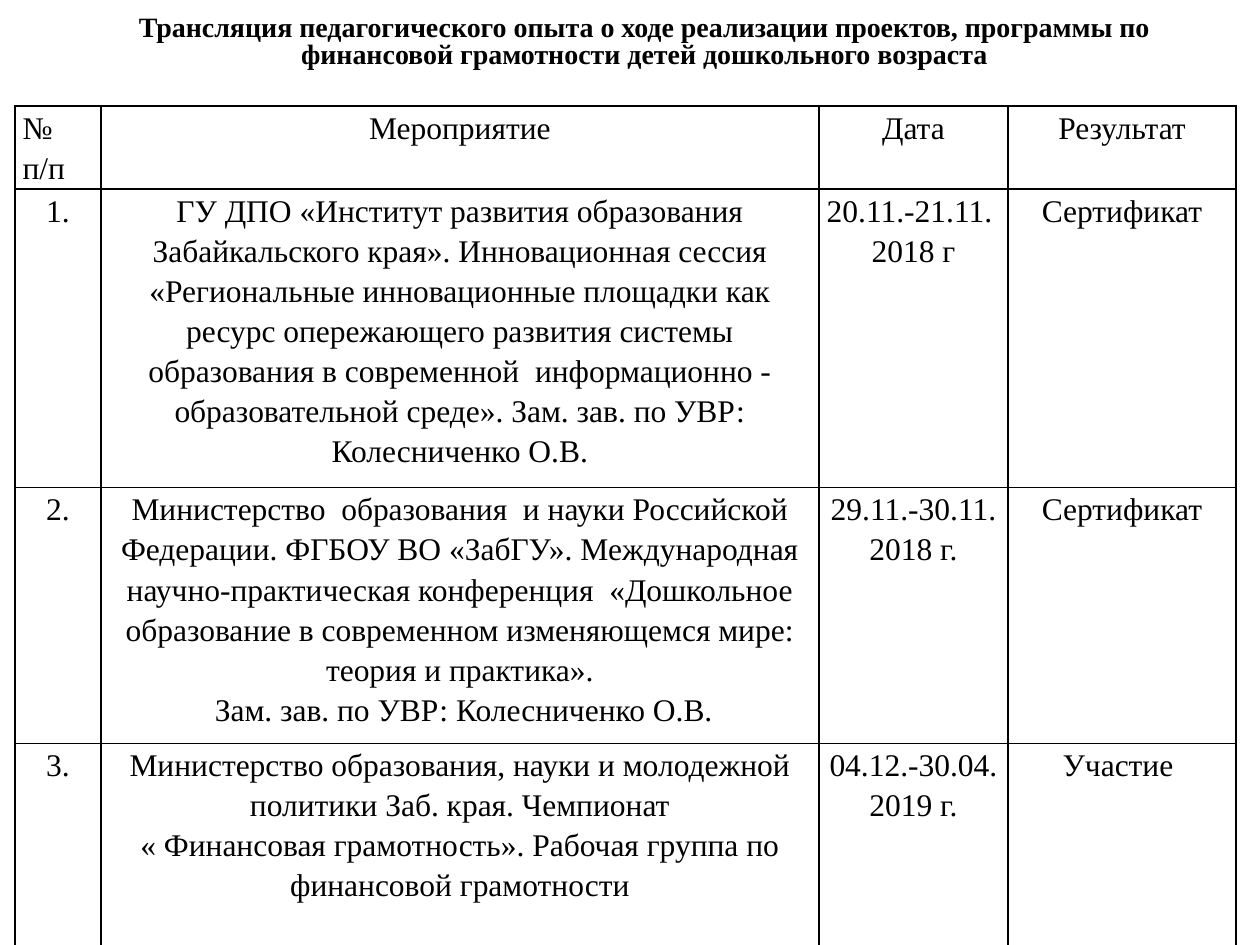
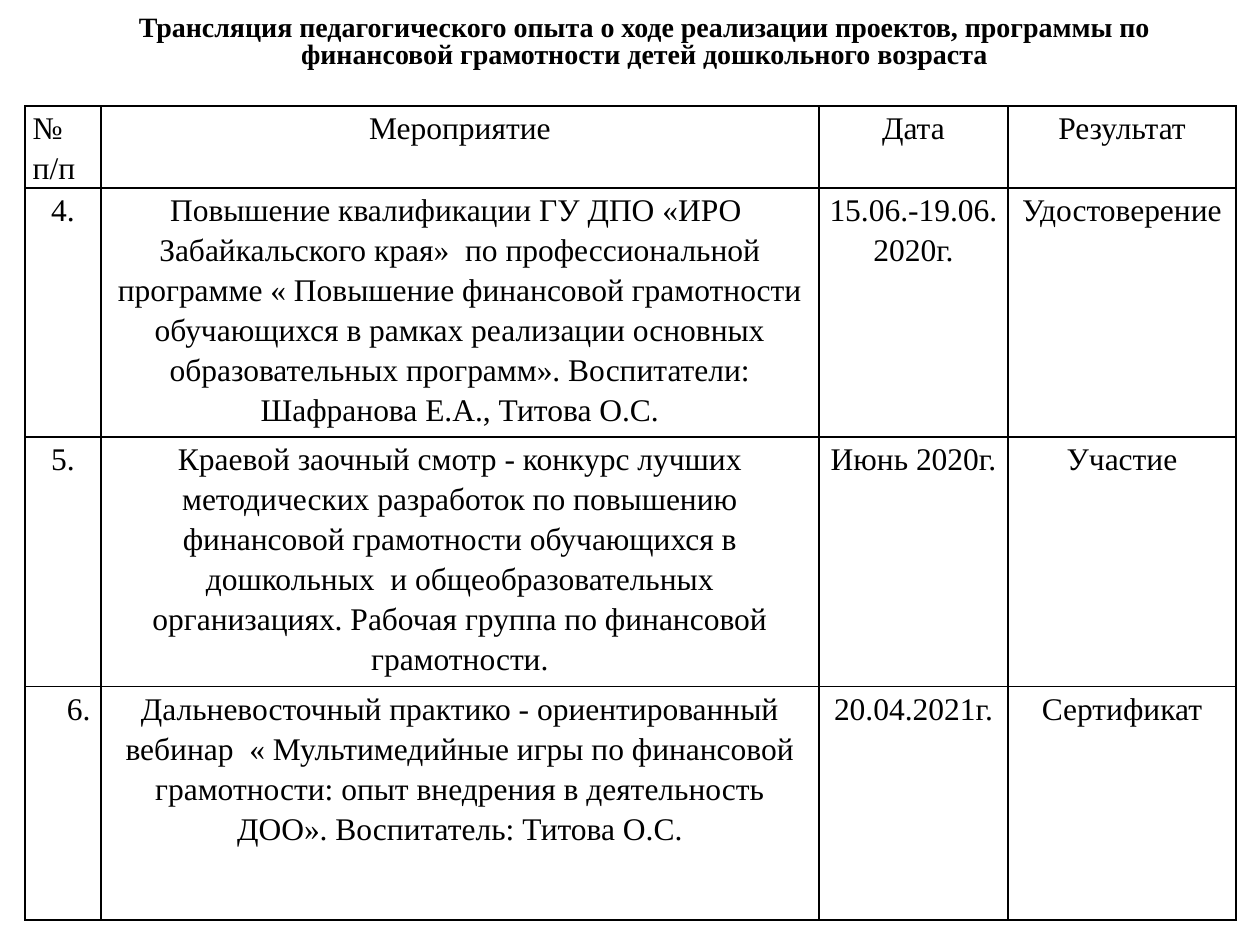
from pptx import Presentation
from pptx.dml.color import RGBColor
from pptx.enum import text
from pptx.oxml.ns import qn
from pptx.util import Inches, Pt
from lxml import etree

FONT = "Times New Roman"
BLACK, WHITE = "000000", "FFFFFF"
TITLE = ("Трансляция педагогического опыта о ходе реализации проектов, программы по "
         "финансовой грамотности детей дошкольного возраста")
HEADER = ["№\nп/п", "Мероприятие", "Дата", "Результат"]
OTHER_COLS = [5.7, 1.5, 1.81]
TABLE_RIGHT, TABLE_TOP = 9.81, 0.84

# In the texts "\n" starts a paragraph and "\v" breaks a line
EVENTS_2018 = [
    ["1.",
     "ГУ ДПО «Институт развития образования Забайкальского края». Инновационная сессия "
     "«Региональные инновационные площадки как ресурс опережающего развития системы "
     "образования в современной  информационно - образовательной среде». "
     "Зам. зав. по УВР: Колесниченко О.В.",
     "20.11.-21.11. \n2018 г", "Сертификат"],
    ["2.",
     "Министерство  образования  и науки Российской Федерации. ФГБОУ ВО «ЗабГУ». "
     "Международная научно-практическая конференция  «Дошкольное образование в "
     "современном изменяющемся мире: теория и практика».\n"
     " Зам. зав. по УВР: Колесниченко О.В.",
     "29.11.-30.11.\n2018 г.", "Сертификат"],
    ["3.",
     "Министерство образования, науки и молодежной политики Заб. края. Чемпионат\n"
     "« Финансовая грамотность». Рабочая группа по финансовой грамотности",
     "04.12.-30.04.\n2019 г.", "Участие "],
]
EVENTS_2020 = [
    ["4.",
     "Повышение квалификации ГУ ДПО «ИРО \vЗабайкальского края»  по профессиональной "
     "программе « Повышение финансовой грамотности обучающихся в рамках реализации "
     "основных образовательных программ». Воспитатели: Шафранова Е.А., Титова О.С.",
     "15.06.-19.06.\n2020г.", "Удостоверение"],
    ["5.",
     "Краевой заочный смотр - конкурс лучших методических разработок по повышению "
     "финансовой грамотности обучающихся в дошкольных  и общеобразовательных "
     "организациях. Рабочая группа по финансовой грамотности.",
     "Июнь 2020г.", "Участие"],
    ["6.",
     "Дальневосточный практико - ориентированный вебинар  « Мультимедийные игры по "
     "финансовой грамотности: опыт внедрения в деятельность ДОО». Воспитатель: Титова О.С.",
     "20.04.2021г.", "Сертификат"],
]


def rgb(value):
    return RGBColor.from_string(value)


def format_text(tf, size, spacing, align, bold=False):
    for p in tf.paragraphs:
        p.alignment = align
        p.line_spacing = spacing
        for r in p.runs:
            r.font.name = FONT
            r.font.size = Pt(size)
            r.font.bold = bold
            r.font.color.rgb = rgb(BLACK)


def add_borders(cell, color=BLACK, width=1):
    tc_pr = cell._tc.get_or_add_tcPr()
    for side in ("lnL", "lnR", "lnT", "lnB"):
        ln = etree.SubElement(tc_pr, qn(f"a:{side}"), w=str(Pt(width)))
        fill = etree.SubElement(ln, qn("a:solidFill"))
        etree.SubElement(fill, qn("a:srgbClr"), val=color)


def fill_cell(cell, value, align):
    cell.text_frame.text = value
    cell.margin_left = cell.margin_right = Inches(0.06)
    cell.margin_top = cell.margin_bottom = 0
    format_text(cell.text_frame, 18, 1.15, align)
    add_borders(cell)
    cell.fill.solid()
    cell.fill.fore_color.rgb = rgb(WHITE)


def add_title(slide):
    sp = slide.shapes.title
    sp.left, sp.top, sp.width, sp.height = map(Inches, (0.51, 0, 9.21, 0.63))
    tf = sp.text_frame
    tf.text = TITLE
    tf.word_wrap = True
    tf.auto_size = text.MSO_AUTO_SIZE.NONE
    tf.vertical_anchor = text.MSO_ANCHOR.TOP
    tf.margin_top = Inches(0.13)
    format_text(tf, 16, 0.8, text.PP_ALIGN.CENTER, bold=True)


def add_events_table(slide, events, number_col, row_heights):
    cols = [number_col] + OTHER_COLS
    rows = [HEADER] + events
    width = sum(cols)
    frame = slide.shapes.add_table(
        len(rows), len(cols), Inches(TABLE_RIGHT - width), Inches(TABLE_TOP),
        Inches(width), Inches(sum(row_heights)))
    table = frame.table
    table.first_row = table.horz_banding = False
    for col, col_width in zip(table.columns, cols):
        col.width = Inches(col_width)
    for row, height, values in zip(table.rows, row_heights, rows):
        row.height = Inches(height)
        for cell, value in zip(row.cells, values):
            left = value == HEADER[0]
            fill_cell(cell, value, text.PP_ALIGN.LEFT if left else text.PP_ALIGN.CENTER)
    return table


def add_events_slide(prs, events, number_col, row_heights):
    slide = prs.slides.add_slide(prs.slide_layouts[5])
    add_title(slide)
    return add_events_table(slide, events, number_col, row_heights)


def main():
    prs = Presentation()
    prs.slide_width, prs.slide_height = Inches(10), Inches(7.5)

    # Events 1 to 3
    add_events_slide(prs, EVENTS_2018, 0.68, [0.66, 2.37, 2.03, 1.61])

    # Events 4 to 6, the last number is indented
    table = add_events_slide(prs, EVENTS_2020, 0.6, [0.65, 1.98, 1.98, 1.85])
    p = table.cell(3, 0).text_frame.paragraphs[0]
    p._p.get_or_add_pPr().set("marL", str(Inches(0.25)))

    prs.save("out.pptx")


if __name__ == "__main__":
    main()
